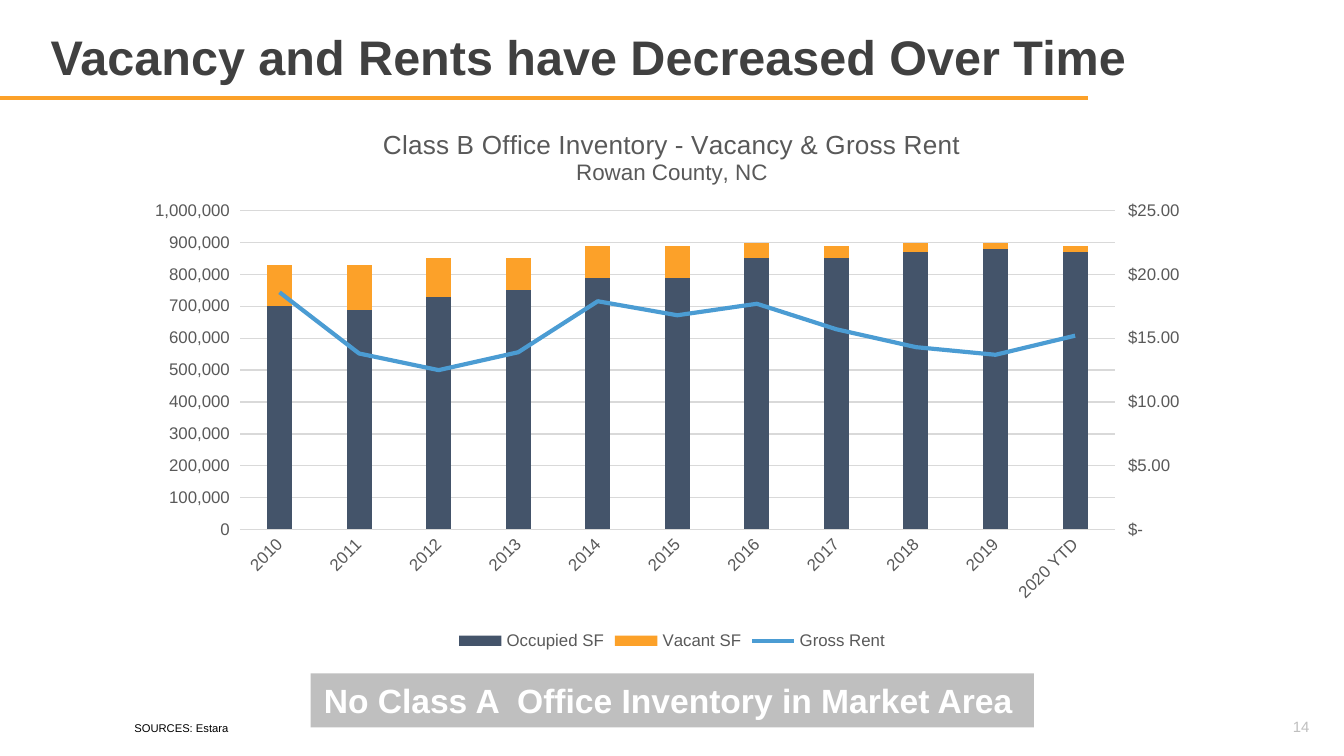
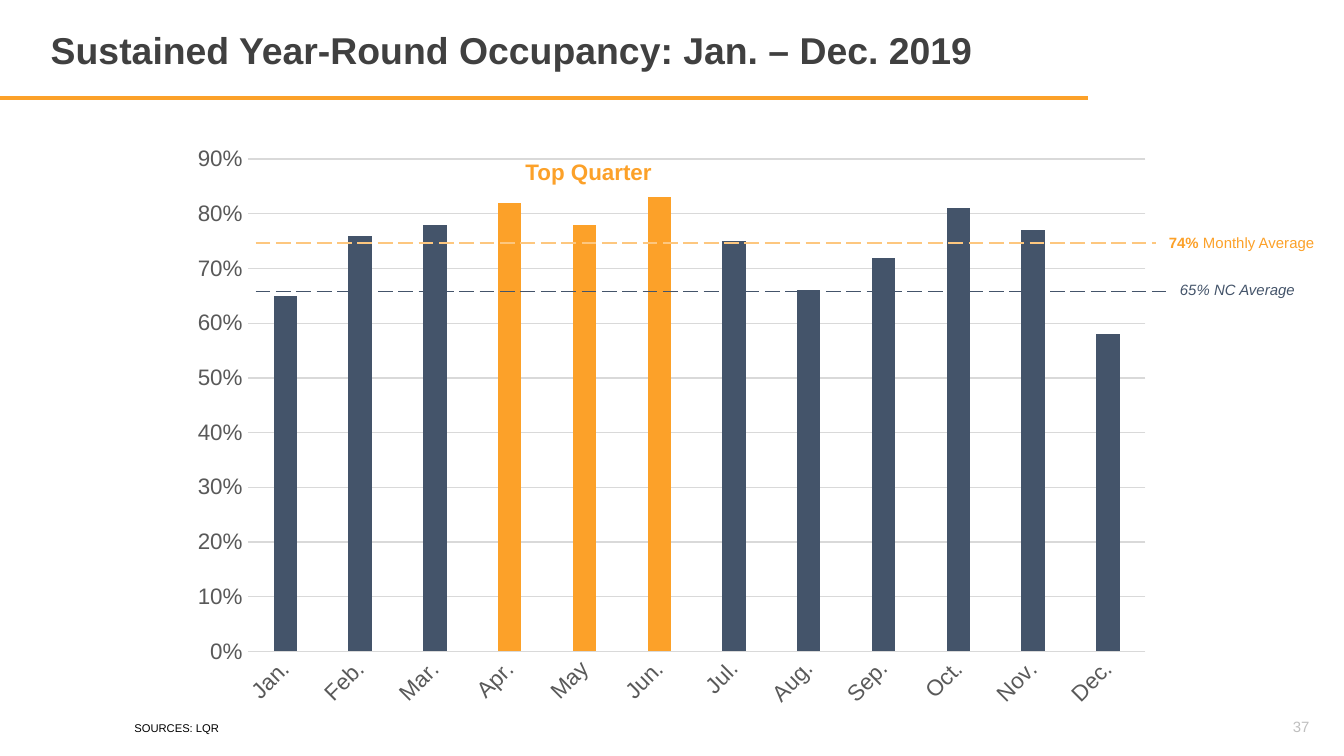
from dataclasses import dataclass

from pptx import Presentation
from pptx.chart.axis import ValueAxis
from pptx.chart.data import CategoryChartData
from pptx.dml.color import RGBColor
from pptx.enum.chart import XL_CHART_TYPE, XL_LEGEND_POSITION, XL_MARKER_STYLE, XL_TICK_MARK
from pptx.enum.dml import MSO_LINE
from pptx.enum.shapes import MSO_CONNECTOR, MSO_SHAPE
from pptx.enum.text import MSO_ANCHOR, PP_ALIGN
from pptx.oxml import parse_xml
from pptx.oxml.ns import nsdecls
from pptx.util import Cm, Pt

STACKED, CLUSTERED = XL_CHART_TYPE.COLUMN_STACKED, XL_CHART_TYPE.COLUMN_CLUSTERED
BOTTOM = XL_LEGEND_POSITION.BOTTOM
NO_MARKER = XL_MARKER_STYLE.NONE
NO_TICK, TICK_OUT = XL_TICK_MARK.NONE, XL_TICK_MARK.OUTSIDE
LONG_DASH = MSO_LINE.LONG_DASH
STRAIGHT = MSO_CONNECTOR.STRAIGHT
RECTANGLE = MSO_SHAPE.RECTANGLE
TOP, MIDDLE = MSO_ANCHOR.TOP, MSO_ANCHOR.MIDDLE
LEFT, CENTER, RIGHT = PP_ALIGN.LEFT, PP_ALIGN.CENTER, PP_ALIGN.RIGHT


@dataclass(frozen=True)
class Theme:
    font: str = "Arial"
    navy: str = "44546A"
    orange: str = "FCA129"
    pale_orange: str = "FDC77F"
    blue: str = "4B9CD3"
    title: str = "404040"
    label: str = "595959"
    grid: str = "D9D9D9"
    grey: str = "BFBFBF"
    white: str = "FFFFFF"
    black: str = "000000"
    heading_size: int = 26
    long_heading_size: int = 20
    banner_size: int = 18
    chart_title_size: int = 14
    large_size: int = 12
    chart_size: int = 10
    axis_size: int = 9
    small_size: int = 8
    source_size: int = 6


THEME = Theme()


@dataclass(frozen=True)
class Box:
    """A rectangle in centimetres."""
    left: float
    top: float
    width: float
    height: float

    def inner(self, left, top, width, height):
        return Box(self.left + left, self.top + top, width, height)

    def lengths(self):
        return Cm(self.left), Cm(self.top), Cm(self.width), Cm(self.height)


PAGE = Box(0, 0, 25.4, 14.29)


# Text and lines
def style_font(font, size, color, bold=False, italic=False):
    font.name = THEME.font
    font.size = Pt(size)
    font.color.rgb = RGBColor.from_string(color)
    font.bold = bold
    font.italic = italic


def add_text(page, box, text, size, color, bold=False, italic=False, align=LEFT, anchor=TOP):
    shape = page.shapes.add_textbox(*box.lengths())
    frame = shape.text_frame
    frame.word_wrap = True
    frame.vertical_anchor = anchor
    para = frame.paragraphs[0]
    para.text = text
    para.alignment = align
    style_font(para.font, size, color, bold, italic)
    return para


def style_line(line, color, weight):
    line.color.rgb = RGBColor.from_string(color)
    line.width = Pt(weight)


def add_rule(page, left, top, width, color, weight, dash=None):
    rule = page.shapes.add_connector(STRAIGHT, Cm(left), Cm(top), Cm(left + width), Cm(top))
    style_line(rule.line, color, weight)
    if dash is not None:
        rule.line.dash_style = dash
    rule._element.spPr.append(parse_xml(f"<a:effectLst {nsdecls('a')}/>"))


# Shared page frame: heading, rule, source and page number
def add_page(deck, heading, size, source, number):
    page = deck.slides.add_slide(deck.slide_layouts[6])
    add_rule(page, 0, 1.85, 20.57, THEME.orange, 2)
    add_text(page, PAGE.inner(0.71, 0.38, 21.2, 1.45), heading, size, THEME.title, bold=True)
    add_text(page, PAGE.inner(2.29, 13.51, 7.16, 0.51), source, THEME.source_size, THEME.black)
    add_text(page, PAGE.inner(22.76, 13.36, 2.24, 0.76), number, THEME.small_size, THEME.grey,
             align=RIGHT, anchor=MIDDLE)
    return page


# Chart helpers
def fill_solid(fill, color):
    fill.solid()
    fill.fore_color.rgb = RGBColor.from_string(color)


def style_value_axis(axis, maximum, step, number_format, size, tick=NO_TICK):
    axis.minimum_scale, axis.maximum_scale, axis.major_unit = 0, maximum, step
    axis.major_tick_mark, axis.minor_tick_mark = tick, NO_TICK
    axis.tick_labels.number_format = number_format
    axis.tick_labels.number_format_is_linked = False
    style_font(axis.tick_labels.font, size, THEME.label)
    axis.format.line.fill.background()


def set_plot_area(chart, left, top, width, height):
    """Place the inner plot area, as fractions of the chart."""
    area = chart._chartSpace.chart.plotArea
    for old in area.xpath("c:layout"):
        area.remove(old)
    area.insert(0, parse_xml(
        f"<c:layout {nsdecls('c')}><c:manualLayout><c:layoutTarget val='inner'/>"
        f"<c:xMode val='edge'/><c:yMode val='edge'/><c:x val='{left}'/><c:y val='{top}'/>"
        f"<c:w val='{width}'/><c:h val='{height}'/></c:manualLayout></c:layout>"))


def add_columns(page, box, kind, categories, series, colors, overlap, size):
    data = CategoryChartData()
    data.categories = categories
    for name, values in series.items():
        data.add_series(name, values)
    chart = page.shapes.add_chart(kind, *box.lengths(), data).chart
    style_font(chart.font, THEME.chart_size, THEME.black)
    chart.has_title = chart.has_legend = False
    plot = chart.plots[0]
    plot.gap_width, plot.overlap, plot.vary_by_categories = 219, overlap, False
    for item, color in zip(plot.series, colors):
        fill_solid(item.format.fill, color)
    axis = chart.category_axis
    axis.major_tick_mark = axis.minor_tick_mark = NO_TICK
    style_font(axis.tick_labels.font, size, THEME.label)
    axis._element.txPr.bodyPr.set("rot", "-2700000")
    style_line(axis.format.line, THEME.grid, 0.75)
    chart.value_axis.has_major_gridlines = True
    style_line(chart.value_axis.major_gridlines.format.line, THEME.grid, 0.75)
    return chart


def move_last_series_to_line(chart):
    """Turn the last column series into a line on a right-hand axis, and return that axis."""
    area = chart._chartSpace.chart.plotArea
    columns = area.xpath("c:barChart")[0]
    series = columns.xpath("c:ser")[-1]
    for flag in series.xpath("c:invertIfNegative"):
        series.remove(flag)
    names = nsdecls("c")
    line = parse_xml(
        f"<c:lineChart {names}><c:grouping val='standard'/><c:varyColors val='0'/>"
        "<c:marker val='1'/><c:axId val='5001'/><c:axId val='5002'/></c:lineChart>")
    line.insert(2, series)
    columns.addnext(line)
    hidden = parse_xml(
        f"<c:catAx {names}><c:axId val='5001'/><c:scaling><c:orientation val='minMax'/></c:scaling>"
        "<c:delete val='1'/><c:axPos val='b'/><c:crossAx val='5002'/>"
        "<c:crosses val='autoZero'/></c:catAx>")
    right = parse_xml(
        f"<c:valAx {names}><c:axId val='5002'/><c:scaling><c:orientation val='minMax'/></c:scaling>"
        "<c:delete val='0'/><c:axPos val='r'/><c:tickLblPos val='nextTo'/><c:crossAx val='5001'/>"
        "<c:crosses val='max'/><c:crossBetween val='between'/></c:valAx>")
    area.xpath("c:valAx")[-1].addnext(hidden)
    hidden.addnext(right)
    return ValueAxis(right)


# Office vacancy and rent
def add_vacancy_chart(page, box):
    years = [str(year) for year in range(2010, 2020)] + ["2020 YTD"]
    series = {
        "Occupied SF": [700000, 690000, 730000, 750000, 790000, 790000,
                        850000, 850000, 870000, 880000, 870000],
        "Vacant SF": [130000, 140000, 120000, 100000, 100000, 100000,
                      50000, 40000, 30000, 20000, 20000],
        "Gross Rent": [18.6, 13.8, 12.5, 13.9, 17.9, 16.8, 17.7, 15.7, 14.3, 13.7, 15.2],
    }
    chart = add_columns(page, box, STACKED, years, series, (THEME.navy, THEME.orange),
                        100, THEME.axis_size)
    style_value_axis(chart.value_axis, 1000000, 100000, "#,##0_);[Red]\\(#,##0\\)",
                     THEME.axis_size)
    rent_axis = move_last_series_to_line(chart)
    style_value_axis(rent_axis, 25, 5, '"$"#,##0.00;-"$"#,##0.00;"$-"', THEME.axis_size, TICK_OUT)
    rent = chart.plots[1].series[0]
    rent.smooth = False
    rent.marker.style = NO_MARKER
    style_line(rent.format.line, THEME.blue, 2.25)
    set_plot_area(chart, 0.1, 0.19, 0.81, 0.58)

    # Two-line title and legend
    chart.has_title = True
    frame = chart.chart_title.text_frame
    frame.text = "Class B Office Inventory - Vacancy & Gross Rent\nRowan County, NC"
    for para, size in zip(frame.paragraphs, (THEME.chart_title_size, THEME.large_size)):
        style_font(para.font, size, THEME.label)
    chart.has_legend = True
    chart.legend.position = BOTTOM
    chart.legend.include_in_layout = False
    style_font(chart.legend.font, THEME.axis_size, THEME.label)


def add_banner(page, box, text):
    shape = page.shapes.add_shape(RECTANGLE, *box.lengths())
    shape.shadow.inherit = False
    fill_solid(shape.fill, THEME.grey)
    shape.line.fill.background()
    frame = shape.text_frame
    frame.word_wrap = False
    frame.vertical_anchor = TOP
    para = frame.paragraphs[0]
    para.text = text
    para.alignment = LEFT
    style_font(para.font, THEME.banner_size, THEME.white, bold=True)


# Monthly occupancy with average lines
def add_occupancy_chart(page, box):
    months = ["Jan.", "Feb.", "Mar.", "Apr.", "May", "Jun.",
              "Jul.", "Aug.", "Sep.", "Oct.", "Nov.", "Dec."]
    shares = [0.65, 0.76, 0.78, 0.82, 0.78, 0.83, 0.75, 0.66, 0.72, 0.81, 0.77, 0.58]
    chart = add_columns(page, box, CLUSTERED, months, {"Series 1": shares}, (THEME.navy,),
                        -27, THEME.large_size)
    style_value_axis(chart.value_axis, 0.9, 0.1, "0%", THEME.large_size)
    set_plot_area(chart, 0.07, 0.04, 0.91, 0.85)
    for month in ("Apr.", "May", "Jun."):
        point = chart.plots[0].series[0].points[months.index(month)]
        fill_solid(point.format.fill, THEME.orange)
    add_text(page, box.inner(6.12, 0.3, 3.25, 0.76), "Top Quarter", THEME.large_size,
             THEME.orange, bold=True, align=CENTER)

    # Average lines, each with its label on the right
    line_left = box.left + 1.45
    add_rule(page, line_left, box.top + 2.03, 17.02, THEME.pale_orange, 1, LONG_DASH)
    add_rule(page, line_left, box.top + 2.94, 17.2, THEME.navy, 1, LONG_DASH)
    para = add_text(page, box.inner(18.46, 1.72, 3.43, 0.61), "", THEME.small_size, THEME.orange)
    for text, bold in (("74% ", True), ("Monthly Average", False)):
        span = para.add_run()
        span.text = text
        span.font.bold = bold
    add_text(page, box.inner(18.67, 2.61, 3.35, 0.61), "65% NC Average", THEME.small_size,
             THEME.navy, italic=True)


def main():
    deck = Presentation()
    deck.slide_width, deck.slide_height = Cm(PAGE.width), Cm(PAGE.height)

    page = add_page(deck, "Vacancy and Rents have Decreased Over Time", THEME.heading_size,
                    "SOURCES: Estara", "14")
    add_vacancy_chart(page, PAGE.inner(2.49, 2.01, 20.42, 10.39))
    add_banner(page, PAGE.inner(5.87, 12.73, 13.67, 1.02),
               "No Class A  Office Inventory in Market Area")

    page = add_page(deck, "Sustained Year-Round Occupancy: Jan. – Dec. 2019",
                    THEME.long_heading_size, "SOURCES: LQR", "37")
    add_occupancy_chart(page, PAGE.inner(3.38, 2.57, 18.64, 10.95))

    deck.save("out.pptx")


if __name__ == "__main__":
    main()
